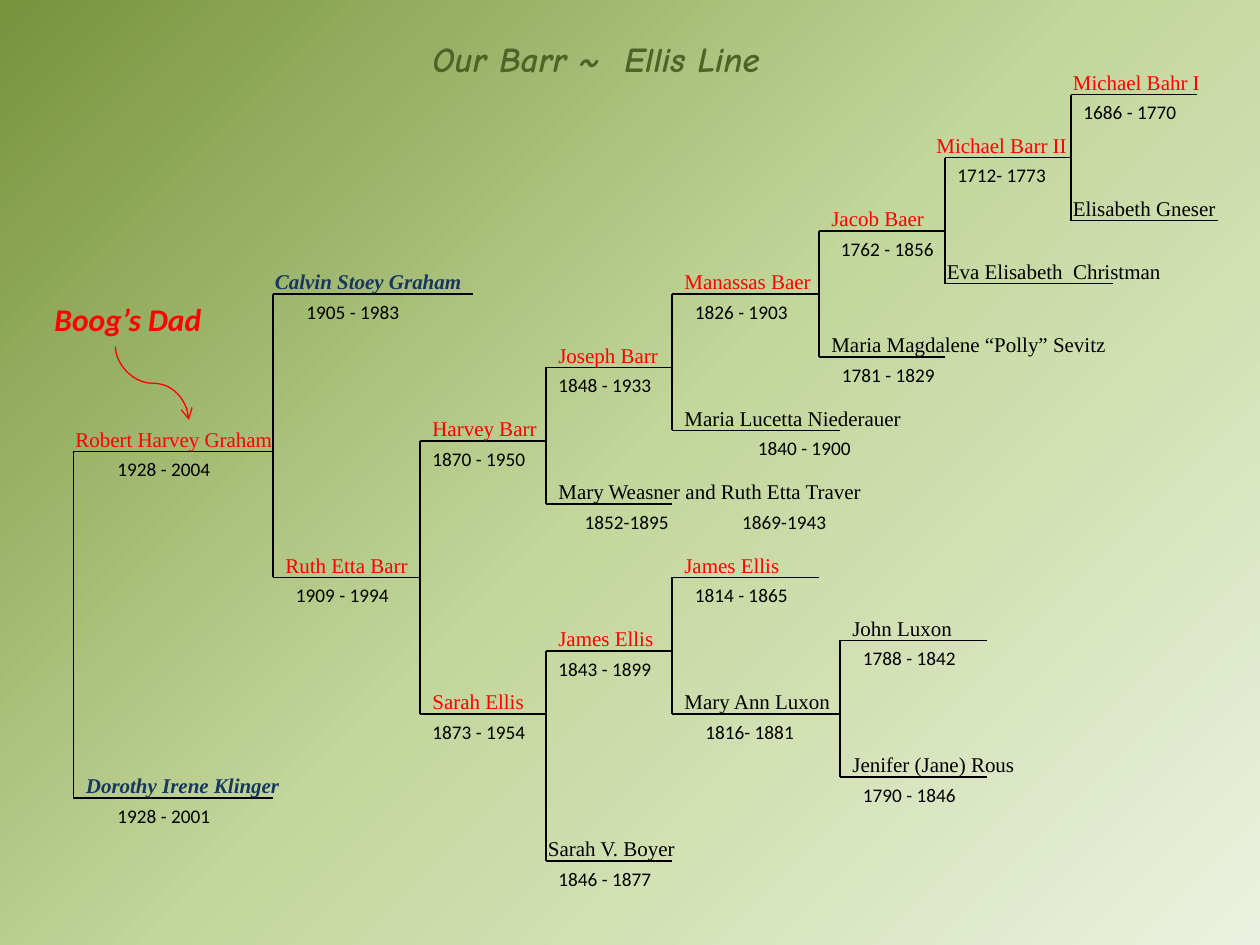
from dataclasses import dataclass

from lxml import etree
from pptx import Presentation
from pptx.dml.color import RGBColor
from pptx.enum.shapes import MSO_CONNECTOR
from pptx.enum.text import MSO_AUTO_SIZE
from pptx.oxml.ns import qn
from pptx.util import Inches, Pt

STRAIGHT = MSO_CONNECTOR.STRAIGHT
CURVE = MSO_CONNECTOR.CURVE
GROW = MSO_AUTO_SIZE.SHAPE_TO_FIT_TEXT
CELL = 1 / 12
COLUMNS, ROWS = 120, 90


@dataclass(frozen=True)
class Style:
    """Type style of one kind of text."""
    font: str
    size: int
    colour: str
    strong: bool = False


@dataclass(frozen=True)
class Theme:
    """Colours and type sizes of the family tree."""
    line: str = "000000"
    arrow: str = "FF0000"
    line_width: float = 0.75
    backdrop: tuple = ((0, "EBF1DE"), (50, "C3D69B"), (100, "77933C"), (100, "4F6228"))
    title: Style = Style("Comic Neue", 20, "4F6228", True)
    callout: Style = Style("Calibri", 18, "FF0000", True)
    direct: Style = Style("Times New Roman", 12, "FF0000")
    spouse: Style = Style("Times New Roman", 12, "000000")
    parent: Style = Style("Times New Roman", 12, "17375E", True)
    dates: Style = Style("Calibri", 11, "000000")


THEME = Theme()


@dataclass(frozen=True)
class Box:
    """Area of the page in grid columns and rows."""
    left: float
    top: float
    width: float
    height: float

    def inner(self, left, top, width, height):
        """Return an area placed relative to this one."""
        return Box(self.left + left, self.top + top, width, height)


@dataclass(frozen=True)
class Dates:
    """Life dates with their offset from the name line."""
    text: str
    shift: float = 0
    width: float = 12
    indent: float = 0


@dataclass(frozen=True)
class Person:
    """One name on a line of the tree."""
    name: str
    style: Style
    line: float
    width: float
    dates: tuple = ()
    shift: float = 0


@dataclass(frozen=True)
class Couple:
    """Two people joined by a bracket."""
    column: float
    rows: tuple
    people: tuple


DIRECT, SPOUSE, PARENT = THEME.direct, THEME.spouse, THEME.parent
COUPLES = (
    Couple(7, (43, 76), (
        Person("Robert Harvey Graham", DIRECT, 19, 23, (Dates("1928 - 2004", 3),), -1),
        Person("Dorothy Irene Klinger", PARENT, 19, 21, (Dates("1928 - 2001", 3),)))),
    Couple(26, (28, 55), (
        Person("Calvin Stoey Graham", PARENT, 19, 20.4, (Dates("1905 - 1983", 2),), -1),
        Person("Ruth Etta Barr", DIRECT, 14, 15, (Dates("1909 - 1994", 1),)))),
    Couple(40, (42, 68), (
        Person("Harvey Barr", DIRECT, 12, 13, (Dates("1870 - 1950"),)),
        Person("Sarah Ellis", DIRECT, 12, 13, (Dates("1873 - 1954"),)))),
    Couple(52, (35, 48), (
        Person("Joseph Barr", DIRECT, 12, 13, (Dates("1848 - 1933"),)),
        Person("Mary Weasner and Ruth Etta Traver", SPOUSE, 12, 42,
               (Dates("1852-1895", 0, 13, 2.5), Dates("1869-1943", 15, 13, 2.5))))),
    Couple(52, (62, 82), (
        Person("James Ellis", DIRECT, 12, 13, (Dates("1843 - 1899"),)),
        Person("Sarah V. Boyer", SPOUSE, 12, 16, (Dates("1846 - 1877"),), -1))),
    Couple(64, (28, 41), (
        Person("Manassas Baer", DIRECT, 14, 16, (Dates("1826 - 1903", 1),)),
        Person("Maria Lucetta Niederauer", SPOUSE, 16, 24, (Dates("1840 - 1900", 7),)))),
    Couple(64, (55, 68), (
        Person("James Ellis", DIRECT, 14, 13, (Dates("1814 - 1865", 1),)),
        Person("Mary Ann Luxon", SPOUSE, 16, 19, (Dates("1816- 1881", 2),)))),
    Couple(78, (22, 34), (
        Person("Jacob Baer", DIRECT, 12, 13, (Dates("1762 - 1856", -2, 15, 2.9),)),
        Person("Maria Magdalene “Polly” Sevitz", SPOUSE, 12, 30, (Dates("1781 - 1829", 1),)))),
    Couple(80, (61, 74), (
        Person("John Luxon", SPOUSE, 14, 13, (Dates("1788 - 1842", 1),)),
        Person("Jenifer (Jane) Rous", SPOUSE, 14, 20, (Dates("1790 - 1846", 1),)))),
    Couple(90, (15, 27), (
        Person("Michael Barr II", DIRECT, 12, 17, (Dates("1712- 1773"),), -2),
        Person("Eva Elisabeth  Christman", SPOUSE, 16, 23, (), -1))),
    Couple(102, (9, 21), (
        Person("Michael Bahr I", DIRECT, 12, 15, (Dates("1686 - 1770"),), -1),
        Person("Elisabeth Gneser", SPOUSE, 14, 17, (), -1))),
)


def cells(count):
    """Convert grid cells to a length."""
    return Inches(count * CELL)


def add_text(page, box, text, style, indent=0):
    """Write one line of text in a box that fits it."""
    shape = page.shapes.add_textbox(*map(cells, (box.left, box.top, box.width, box.height)))
    frame = shape.text_frame
    frame.word_wrap = not style.strong
    frame.auto_size = GROW
    para = frame.paragraphs[0]
    if indent:
        para._p.get_or_add_pPr().set("marL", str(cells(indent)))
    span = para.add_run()
    span.text = text
    span.font.name = style.font
    span.font.size = Pt(style.size)
    span.font.bold = span.font.italic = style.strong
    span.font.color.rgb = RGBColor.from_string(style.colour)


def add_line(page, box, colour=THEME.line, kind=STRAIGHT):
    """Draw a connector from corner to corner of a box."""
    ends = (box.left, box.top, box.left + box.width, box.top + box.height)
    line = page.shapes.add_connector(kind, *map(cells, ends))
    line.line.color.rgb = RGBColor.from_string(colour)
    line.line.width = Pt(THEME.line_width)
    etree.SubElement(line._element.spPr, qn("a:effectLst"))
    return line


def paint_background(page):
    """Fill the page with a round gradient from the lower right corner."""
    fill = page.background.fill
    fill.gradient()
    gradient = fill._fill._gradFill
    for child in list(gradient):
        gradient.remove(child)
    stops = etree.SubElement(gradient, qn("a:gsLst"))
    for share, colour in THEME.backdrop:
        stop = etree.SubElement(stops, qn("a:gs"), pos=str(share * 1000))
        etree.SubElement(stop, qn("a:srgbClr"), val=colour)
    circle = etree.SubElement(gradient, qn("a:path"), {"path": "circle"})
    etree.SubElement(circle, qn("a:fillToRect"), l="100000", t="100000")


def draw_person(page, box, person):
    """Place a name above its line and the dates below."""
    add_line(page, box.inner(0, 0, person.line, 0))
    add_text(page, box.inner(person.shift, -3, person.width, 3.6), person.name, person.style)
    for dates in person.dates:
        place = box.inner(dates.shift, 0, dates.width, 3.5)
        add_text(page, place, dates.text, THEME.dates, dates.indent)


def draw_tree(page, box):
    """Place every couple with its bracket."""
    for couple in COUPLES:
        upper, lower = couple.rows
        add_line(page, box.inner(couple.column, upper, 0, lower - upper))
        for row, person in zip(couple.rows, couple.people):
            draw_person(page, box.inner(couple.column, row, person.line, 0), person)


def draw_callout(page, box):
    """Place the label and its curved arrow."""
    add_text(page, box.inner(0, 0, box.width, 4.8), "Boog’s Dad", THEME.callout)
    arrow = add_line(page, box.inner(7, 5, 7, 7), THEME.arrow, CURVE)
    frame = arrow._element.spPr.find(qn("a:xfrm"))
    frame.set("rot", "16200000")
    frame.set("flipH", "1")
    etree.SubElement(arrow.line._get_or_add_ln(), qn("a:tailEnd"), type="arrow")


def main():
    """Build the family tree deck."""
    deck = Presentation()
    deck.slide_width, deck.slide_height = cells(COLUMNS), cells(ROWS)
    page = deck.slides.add_slide(deck.slide_layouts[6])
    sheet = Box(0, 0, COLUMNS, ROWS)
    paint_background(page)
    draw_tree(page, sheet)
    draw_callout(page, sheet.inner(4, 28, 16.5, 12))
    add_text(page, sheet.inner(40, 3, 34.4, 5.3), "Our Barr ~  Ellis Line", THEME.title)
    deck.save("out.pptx")


if __name__ == "__main__":
    main()
